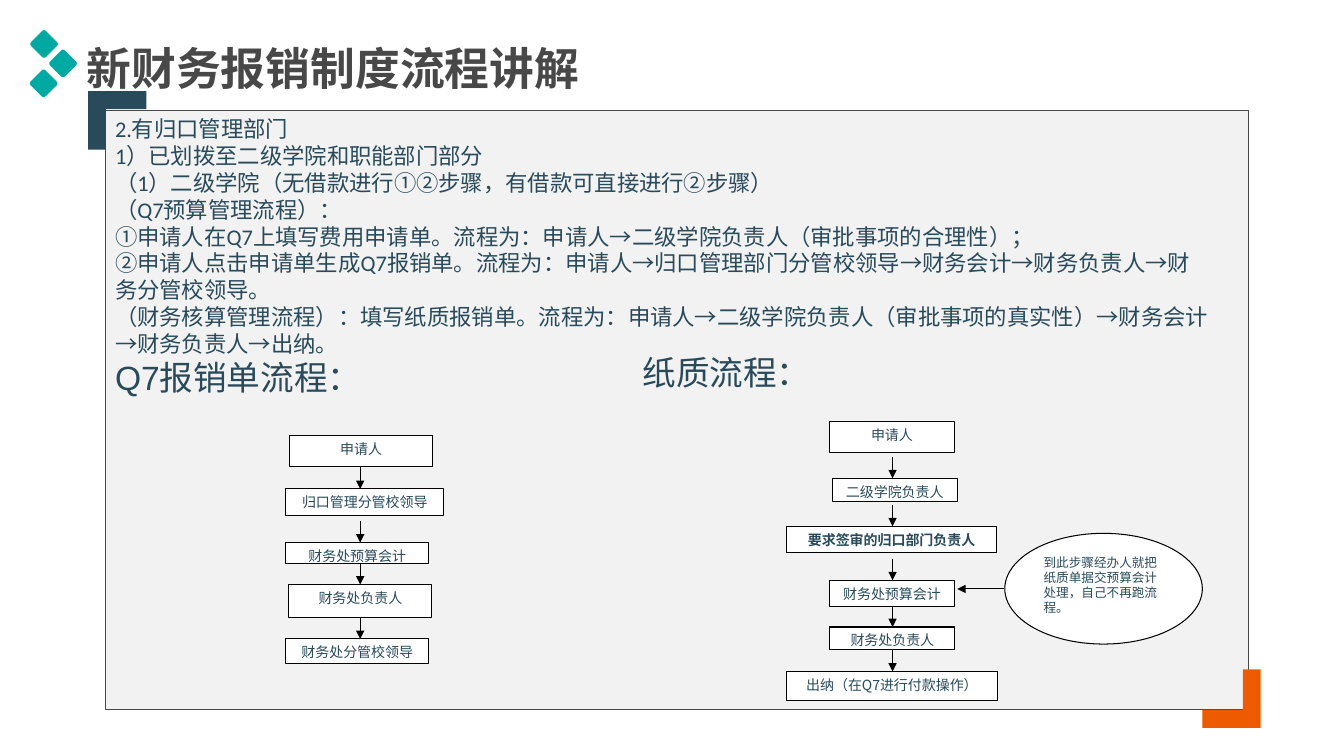
from lxml import etree
from pptx import Presentation
from pptx.dml.color import RGBColor
from pptx.enum.shapes import MSO_CONNECTOR, MSO_SHAPE
from pptx.enum.text import MSO_ANCHOR, PP_ALIGN
from pptx.oxml.ns import qn
from pptx.util import Cm, Pt

COLORS = {"teal": "00AAA2", "navy": "294A5A", "orange": "ED5A00", "panel": "F2F2F2",
          "gray": "484849", "white": "FFFFFF", "black": "000000"}
CJK = "Noto Sans CJK SC"


def write(shape, lines, align=PP_ALIGN.LEFT, color="navy", bold=False):
    """Fill a shape with (text, size, font) lines, set from its top edge."""
    frame = shape.text_frame
    frame.word_wrap = True
    frame.vertical_anchor = MSO_ANCHOR.TOP
    frame.text = "\n".join(text for text, _, _ in lines)
    for para, (_, size, font) in zip(frame.paragraphs, lines):
        para.alignment = align
        para.line_spacing = Pt(size * 1.2)
        for span in para.runs:
            span.font.size = Pt(size)
            span.font.name = font
            span.font.bold = bold
            span.font.color.rgb = RGBColor.from_string(COLORS[color])
            east_asian = etree.SubElement(span.font._element, qn("a:ea"))
            east_asian.set("typeface", CJK)


def paint(shape, fill, line=None):
    shape.shadow.inherit = False
    shape.fill.solid()
    shape.fill.fore_color.rgb = RGBColor.from_string(COLORS[fill])
    if line:
        shape.line.color.rgb = RGBColor.from_string(COLORS[line])
        shape.line.width = Pt(0.75)
    else:
        shape.line.fill.background()


deck = Presentation()
deck.slide_width, deck.slide_height = Cm(33.88), Cm(19.05)
page = deck.slides.add_slide(deck.slide_layouts[6])
shapes = page.shapes

# Title with its three diamonds
title = shapes.add_textbox(Cm(1.93), Cm(0.91), Cm(16.61), Cm(1.63))
write(title, [("新财务报销制度流程讲解", 32, CJK)], color="gray", bold=True)

side = 0.53
for center_x, center_y in [(1.11, 1.11), (1.59, 1.6), (1.1, 2.1)]:
    diamond = shapes.add_shape(MSO_SHAPE.ROUNDED_RECTANGLE, Cm(center_x - side / 2),
                               Cm(center_y - side / 2), Cm(side), Cm(side))
    diamond.adjustments[0] = 0.12
    diamond.rotation = 45
    paint(diamond, "teal")

# Panel and rules
panel = shapes.add_shape(MSO_SHAPE.RECTANGLE, Cm(2.65), Cm(2.78), Cm(28.83), Cm(15.11))
paint(panel, "panel", "gray")

rules = [
    "2.有归口管理部门",
    "1）已划拨至二级学院和职能部门部分",
    "（1）二级学院（无借款进行①②步骤，有借款可直接进行②步骤）",
    "（Q7预算管理流程）：",
    "①申请人在Q7上填写费用申请单。流程为：申请人→二级学院负责人（审批事项的合理性）；",
    "②申请人点击申请单生成Q7报销单。流程为：申请人→归口管理部门分管校领导→财务会计→财务负责人→财务分管校领导。",
    "（财务核算管理流程）：填写纸质报销单。流程为：申请人→二级学院负责人（审批事项的真实性）→财务会计→财务负责人→出纳。",
]
body = shapes.add_textbox(Cm(2.65), Cm(2.78), Cm(28.14), Cm(14.88))
write(body, [(rule, 16, "Calibri") for rule in rules] + [("Q7报销单流程：", 24, "Arial")])
paper_heading = shapes.add_textbox(Cm(15.95), Cm(8.74), Cm(11.1), Cm(1.27))
write(paper_heading, [("纸质流程：", 24, "Arial")])

# Corner brackets: outer corner, and the direction in which the arms run
arm, thickness = 1.47, 0.45
for corner_x, corner_y, way, color in [(2.22, 2.3, 1, "navy"), (31.78, 18.34, -1, "orange")]:
    offsets = [(0, 0), (arm, 0), (arm, thickness), (thickness, thickness),
               (thickness, arm), (0, arm)]
    points = [(Cm(corner_x + way * x), Cm(corner_y + way * y)) for x, y in offsets]
    builder = shapes.build_freeform(*points[0])
    builder.add_line_segments(points[1:], close=True)
    paint(builder.convert_to_shape(), color)

# Flow steps: text, left, top, width, height
online_steps = [
    ("申请人", 7.3, 10.97, 3.61, 0.79),
    ("归口管理分管校领导", 7.2, 12.32, 3.99, 0.66),
    ("财务处预算会计", 7.2, 13.67, 3.61, 0.53),
    ("财务处负责人", 7.28, 14.73, 3.61, 0.84),
    ("财务处分管校领导", 7.2, 16.1, 3.61, 0.61),
]
paper_steps = [
    ("申请人", 20.91, 10.62, 3.15, 0.79),
    ("二级学院负责人", 20.98, 12.05, 3.15, 0.58),
    ("要求签审的归口部门负责人", 19.82, 13.26, 5.31, 0.66),
    ("财务处预算会计", 20.91, 14.62, 3.15, 0.66),
    ("财务处负责人", 20.92, 15.8, 3.15, 0.58),
    ("出纳（在Q7进行付款操作）", 19.83, 16.92, 5.31, 0.74),
]
arrow_length = 0.54
arrows = [(25.32, 14.84, 24.13, 14.84)]
for steps, arrow_x in [(online_steps, 9.08), (paper_steps, 22.5)]:
    for text, left, top, width, height in steps:
        step = shapes.add_shape(MSO_SHAPE.RECTANGLE, Cm(left), Cm(top), Cm(width), Cm(height))
        paint(step, "white", "black")
        signing = text.startswith("要求签审")
        write(step, [(text, 10, "Arial" if signing else CJK)], PP_ALIGN.CENTER, bold=signing)
    arrows += [(arrow_x, top - arrow_length, arrow_x, top) for _, _, top, _, _ in steps[1:]]

note = shapes.add_shape(MSO_SHAPE.OVAL, Cm(25.33), Cm(13.44), Cm(4.98), Cm(2.79))
paint(note, "white", "black")
write(note, [("到此步骤经办人就把纸质单据交预算会计处理，自己不再跑流程。", 9, CJK)])

for ends in arrows:
    arrow = shapes.add_connector(MSO_CONNECTOR.STRAIGHT, *map(Cm, ends))
    arrow.line.color.rgb = RGBColor.from_string(COLORS["black"])
    arrow.line.width = Pt(0.75)
    etree.SubElement(arrow.line._get_or_add_ln(), qn("a:tailEnd")).set("type", "triangle")
    etree.SubElement(arrow._element.spPr, qn("a:effectLst"))

deck.save("out.pptx")
